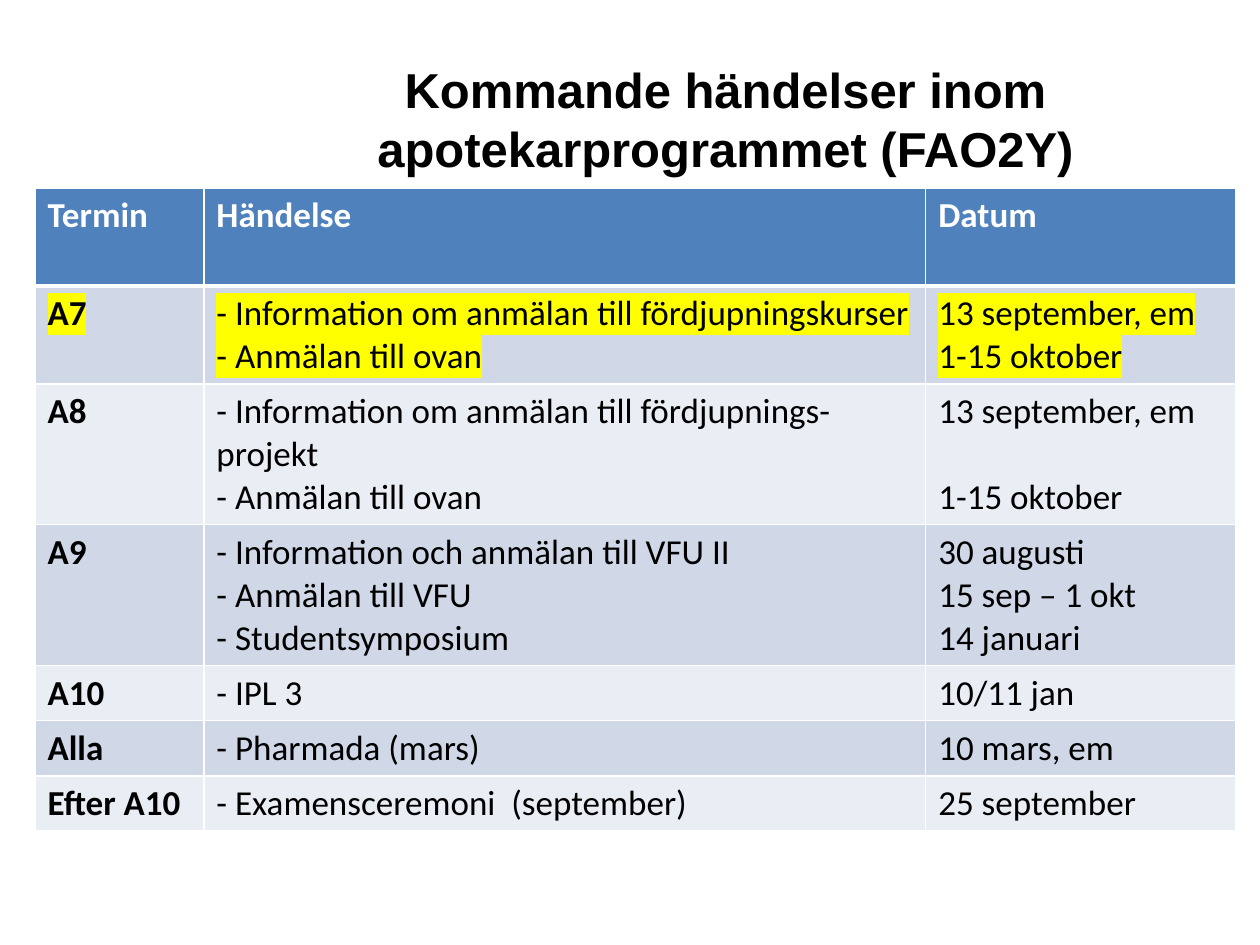
import pptx
import pptx.util
import pptx.dml.color
import pptx.enum.text
import pptx.oxml
import pptx.oxml.ns

Pt = pptx.util.Pt
qn = pptx.oxml.ns.qn
ALIGN = pptx.enum.text.PP_ALIGN
ANCHOR = pptx.enum.text.MSO_ANCHOR

HUES = {"head": "4F81BD", "odd": "D0D8E8", "even": "E9EDF4",
        "white": "FFFFFF", "black": "000000", "mark": "FFFF00"}
LINE = 24.4
PAD = 7.2
COLS = [96.5, 412.5, 177]
ROWS = [
    ("Termin", ["Händelse"], ["Datum"], 2),
    ("A7", ["- Information om anmälan till fördjupningskurser", "- Anmälan till ovan"],
     ["13 september, em", "1-15 oktober"], 2),
    ("A8", ["- Information om anmälan till fördjupnings- projekt", "- Anmälan till ovan"],
     ["13 september, em", "1-15 oktober"], 3),
    ("A9", ["- Information och anmälan till VFU II", "- Anmälan till VFU", "- Studentsymposium"],
     ["30 augusti", "15 sep – 1 okt", "14 januari"], 3),
    ("A10", ["- IPL 3"], ["10/11 jan"], 1),
    ("Alla", ["- Pharmada (mars)"], ["10 mars, em"], 1),
    ("Efter A10", ["- Examensceremoni  (september)"], ["25 september"], 1),
]


def rgb(hue):
    return pptx.dml.color.RGBColor.from_string(HUES[hue])


def write(frame, lines, size=20, face="Calibri", hue="black", bold=False,
          align=ALIGN.LEFT, mark=None, gap=0):
    for i, line in enumerate(lines):
        para = frame.paragraphs[0] if i == 0 else frame.add_paragraph()
        para.alignment = align
        if i and gap:
            para.space_before = Pt(gap)
        run = para.add_run()
        run.text = line
        font = run.font
        font.size, font.bold, font.name = Pt(size), bold, face
        font.color.rgb = rgb(hue)
        if mark:
            xml = pptx.oxml.parse_xml(
                '<a:highlight xmlns:a="http://schemas.openxmlformats.org/drawingml/2006/main">'
                f'<a:srgbClr val="{HUES[mark]}"/></a:highlight>')
            run._r.rPr.find(qn("a:solidFill")).addnext(xml)


def edge(cell, base):
    props = cell._tc.get_or_add_tcPr()
    for i, (side, width) in enumerate(zip("LRTB", (1, 1, 1, base))):
        props.insert(i, pptx.oxml.parse_xml(
            f'<a:ln{side} xmlns:a="http://schemas.openxmlformats.org/drawingml/2006/main" '
            f'w="{Pt(width)}"><a:solidFill><a:srgbClr val="{HUES["white"]}"/>'
            f'</a:solidFill></a:ln{side}>'))


def title(slide, x, y, w, h):
    frame = slide.shapes.add_textbox(Pt(x), Pt(y), Pt(w), Pt(h)).text_frame
    frame.word_wrap = True
    frame.vertical_anchor = ANCHOR.MIDDLE
    write(frame, ["Kommande händelser inom apotekarprogrammet (FAO2Y)"],
          size=28, face="Arial", bold=True, align=ALIGN.CENTER)


def events(slide, x, y, w):
    highs = [PAD + LINE * row[3] for row in ROWS]
    grid = slide.shapes.add_table(len(ROWS), len(COLS), Pt(x), Pt(y),
                                  Pt(w), Pt(sum(highs))).table
    for col, width in zip(grid.columns, COLS):
        col.width = Pt(w * width / sum(COLS))
    for r, (term, acts, dates, count) in enumerate(ROWS):
        grid.rows[r].height = Pt(highs[r])
        for c, lines in enumerate(([term], acts, dates)):
            cell = grid.cell(r, c)
            cell.fill.solid()
            cell.fill.fore_color.rgb = rgb("head" if r == 0 else "odd" if r % 2 else "even")
            edge(cell, 1 if r else 3)
            write(cell.text_frame, lines, hue="black" if r else "white",
                  bold=r == 0 or c == 0, mark="mark" if term == "A7" else None,
                  gap=LINE if term == "A8" and c == 2 else 0)


def main():
    deck = pptx.Presentation()
    deck.slide_width, deck.slide_height = Pt(720), Pt(540)
    slide = deck.slides.add_slide(deck.slide_layouts[6])
    title(slide, 150.5, 22.5, 528, 90)
    events(slide, 20, 107.5, 686)
    deck.save("out.pptx")


if __name__ == "__main__":
    main()
